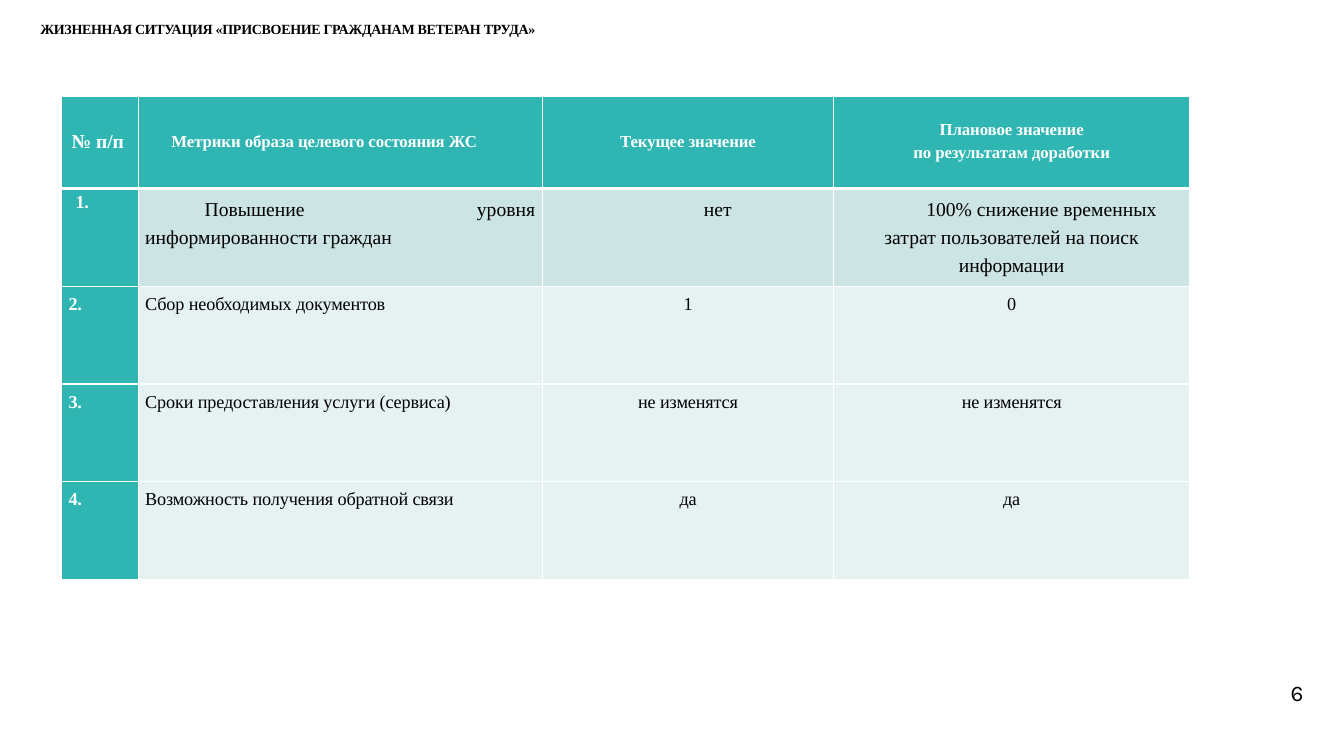
from dataclasses import dataclass

import pptx
import pptx.dml.color
import pptx.enum.text
import pptx.oxml
import pptx.oxml.ns
import pptx.table
import pptx.text.text
import pptx.util

Inches = pptx.util.Inches
Align = pptx.enum.text.PP_ALIGN
Anchor = pptx.enum.text.MSO_ANCHOR


@dataclass(frozen=True)
class Theme:
    serif: str = "Times New Roman"
    sans: str = "Karla"
    black: str = "000000"
    white: str = "FFFFFF"
    teal: str = "2FB5B2"
    first_band: str = "CCE4E3"
    band: str = "E6F1F1"
    title_size: int = 10
    header_size: int = 12
    body_size: int = 13
    large_size: int = 14
    number_size: int = 16


@dataclass(frozen=True)
class CellStyle:
    fill: str
    color: str
    size: int
    bold: bool = False
    align: Align = Align.LEFT
    anchor: Anchor = Anchor.TOP
    margins: tuple[float, float, float, float] = (0, 0.08, 0, 0)  # left, top, right, bottom
    indent: float = 0
    line_spacing: float = 1.0
    tracking: float = 0
    top_border: float = 1
    bottom_border: float = 1


THEME = Theme()
COLUMN_WIDTHS = (0.76, 4.01, 2.89, 3.53)
HEADER_HEIGHT, ROW_HEIGHT = 0.91, 0.97
HEADERS = (
    "№ п/п",
    "Метрики образа целевого состояния ЖС",
    "Текущее значение",
    "Плановое значение\nпо результатам доработки",
)
METRICS = (
    ("Повышение уровня информированности граждан", "нет",
     "100% снижение временных затрат пользователей на поиск информации"),
    ("Сбор необходимых документов", "1", "0"),
    ("Сроки предоставления услуги (сервиса)", "не изменятся", "не изменятся"),
    ("Возможность получения обратной связи", "да", "да"),
)


def format_para(para: pptx.text.text._Paragraph, font: str, size: int, color: str,
                bold: bool = False, tracking: float = 0) -> None:
    para.font.name = font
    para.font.size = pptx.util.Pt(size)
    para.font.bold = bold
    para.font.color.rgb = pptx.dml.color.RGBColor.from_string(color)
    if tracking:
        for span in para.runs:
            span._r.get_or_add_rPr().set("spc", str(round(tracking * 100)))


def set_margins(target, margins: tuple[float, float, float, float]) -> None:
    target.margin_left, target.margin_top, target.margin_right, target.margin_bottom = map(Inches, margins)


def add_border(cell: pptx.table._Cell, side: str, width: float) -> None:
    namespace = pptx.oxml.ns.nsdecls("a")
    cell._tc.get_or_add_tcPr().append(pptx.oxml.parse_xml(
        f'<a:ln{side} {namespace} w="{pptx.util.Pt(width)}"><a:solidFill>'
        f'<a:srgbClr val="{THEME.white}"/></a:solidFill></a:ln{side}>'))


def fill_cell(cell: pptx.table._Cell, text: str, style: CellStyle) -> None:
    borders = {"L": 1, "R": 1, "T": style.top_border, "B": style.bottom_border}
    for side, width in borders.items():
        add_border(cell, side, width)
    cell.fill.solid()
    cell.fill.fore_color.rgb = pptx.dml.color.RGBColor.from_string(style.fill)
    cell.vertical_anchor = style.anchor
    set_margins(cell, style.margins)
    cell.text_frame.text = text
    for index, para in enumerate(cell.text_frame.paragraphs):
        para.alignment = style.align
        para.line_spacing = style.line_spacing
        if index:
            para.space_before = pptx.util.Pt(3)
        if style.indent:
            para._p.get_or_add_pPr().set("indent", str(Inches(style.indent)))
        format_para(para, THEME.serif, style.size, style.color, style.bold, style.tracking)


def header_style(column: int) -> CellStyle:
    left = (0.1, 0.33, 0, 0)[column]
    return CellStyle(
        THEME.teal, THEME.white, THEME.large_size if column == 0 else THEME.header_size,
        bold=True, align=Align.LEFT if column < 2 else Align.CENTER, anchor=Anchor.MIDDLE,
        margins=(left, 0, 0, 0.02), tracking=-0.07, bottom_border=3)


def body_style(row: int, column: int) -> CellStyle:
    first = row == 1
    top_border = 3 if first else 1
    if column == 0:
        margins = (0.14, 0.04, 0.07, 0.08) if first else (0.07, 0.08, 0, 0)
        return CellStyle(THEME.teal, THEME.white, THEME.body_size, bold=True,
                         margins=margins, tracking=-0.2, top_border=top_border)
    if first:
        return CellStyle(THEME.first_band, THEME.black, THEME.large_size,
                         align=Align.JUSTIFY if column == 1 else Align.CENTER,
                         margins=(0.07, 0.04, 0.07, 0.08), indent=0.59,
                         line_spacing=1.3, top_border=top_border)
    return CellStyle(THEME.band, THEME.black, THEME.body_size,
                     align=Align.LEFT if column == 1 else Align.CENTER,
                     margins=(0.07 if column == 1 else 0, 0.08, 0, 0), tracking=-0.08)


def add_title(page) -> None:
    title = page.shapes.title
    title.left, title.top, title.width, title.height = map(Inches, (0.39, 0.18, 5.02, 0.18))
    frame = title.text_frame
    frame.text = "ЖИЗНЕННАЯ СИТУАЦИЯ «ПРИСВОЕНИЕ ГРАЖДАНАМ ВЕТЕРАН ТРУДА»"
    frame.word_wrap = True
    frame.auto_size = pptx.enum.text.MSO_AUTO_SIZE.NONE
    frame.vertical_anchor = Anchor.TOP
    set_margins(frame, (0.01, 0.02, 0, 0))
    para = frame.paragraphs[0]
    para.alignment = Align.LEFT
    format_para(para, THEME.serif, THEME.title_size, THEME.black, bold=True, tracking=-0.2)


def add_metrics_table(page) -> None:
    height = HEADER_HEIGHT + ROW_HEIGHT * len(METRICS)
    table = page.shapes.add_table(
        len(METRICS) + 1, len(COLUMN_WIDTHS), Inches(0.61), Inches(0.96),
        Inches(sum(COLUMN_WIDTHS)), Inches(height)).table
    table.horz_banding = False
    for column, width in zip(table.columns, COLUMN_WIDTHS):
        column.width = Inches(width)
    for index, row in enumerate(table.rows):
        row.height = Inches(ROW_HEIGHT if index else HEADER_HEIGHT)
    for column, text in enumerate(HEADERS):
        fill_cell(table.cell(0, column), text, header_style(column))
    for row, metric in enumerate(METRICS, start=1):
        for column, text in enumerate((f"{row}.", *metric)):
            fill_cell(table.cell(row, column), text, body_style(row, column))


def add_page_number(page) -> None:
    box = page.shapes.add_textbox(*map(Inches, (12.76, 6.75, 0.22, 0.28)))
    frame = box.text_frame
    frame.text = "6"
    frame.word_wrap = True
    set_margins(frame, (0.04, 0, 0, 0))
    para = frame.paragraphs[0]
    para.line_spacing = pptx.util.Pt(18.6)
    format_para(para, THEME.sans, THEME.number_size, THEME.black, tracking=-0.5)


def main() -> None:
    deck = pptx.Presentation()
    deck.slide_width, deck.slide_height = Inches(13.33), Inches(7.5)
    page = deck.slides.add_slide(deck.slide_layouts.get_by_name("Title Only"))

    # Heading
    add_title(page)
    # Metrics: current and planned values
    add_metrics_table(page)
    # Page number
    add_page_number(page)

    deck.save("out.pptx")


if __name__ == "__main__":
    main()
